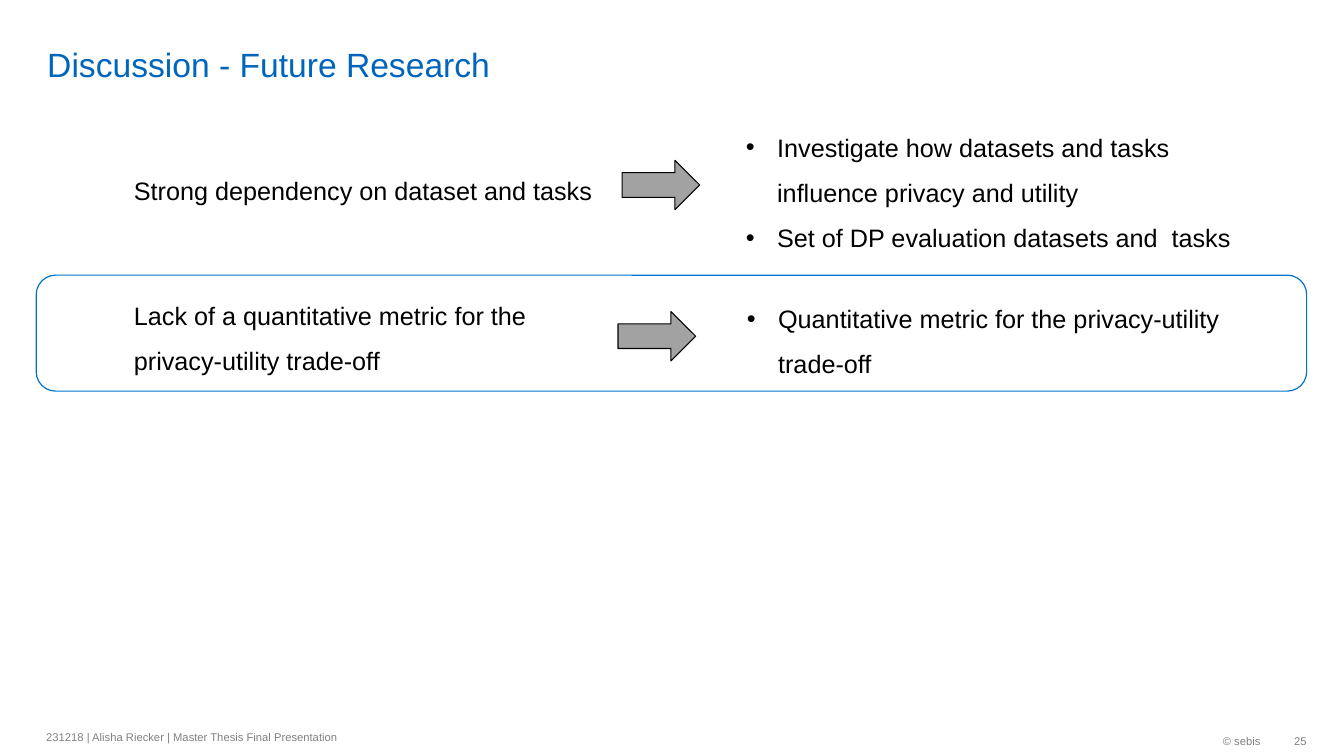
from lxml.etree import SubElement
from pptx import Presentation
from pptx.dml.color import RGBColor
from pptx.enum.shapes import MSO_SHAPE as Shape
from pptx.enum.text import MSO_ANCHOR as Anchor, PP_ALIGN as Align
from pptx.oxml.ns import qn
from pptx.util import Inches, Pt

BLACK = RGBColor(0x00, 0x00, 0x00)
WHITE = RGBColor(0xFF, 0xFF, 0xFF)
GREY = RGBColor(0x80, 0x80, 0x80)
SILVER = RGBColor(0xA2, 0xA2, 0xA2)
BLUE = RGBColor(0x00, 0x65, 0xBD)
EDGE = RGBColor(0x00, 0x73, 0xCF)


def add_bullet(para):
    props = para._p.get_or_add_pPr()
    indent = Inches(0.31)
    props.set("marL", str(indent))
    props.set("indent", str(-indent))
    SubElement(props, qn("a:buFont")).set("typeface", "Arial")
    SubElement(props, qn("a:buChar")).set("char", "•")


class Deck:
    """Holds the style and the current slide."""

    face = "Arial"

    def __init__(self):
        self.show = Presentation()
        self.show.slide_width = Inches(13.33)
        self.show.slide_height = Inches(7.5)
        self.slide = self.show.slides.add_slide(self.show.slide_layouts[6])

    def text(self, box, *lines, size=18, color=BLACK, align=Align.LEFT,
             anchor=Anchor.TOP, pad=(0.1, 0.05, 0.1, 0.05), space=1.0,
             bullet=False):
        """Add a text box; pad is left, top, right, bottom."""
        frame = self.slide.shapes.add_textbox(*map(Inches, box)).text_frame
        frame.word_wrap = True
        frame.vertical_anchor = anchor
        (frame.margin_left, frame.margin_top,
         frame.margin_right, frame.margin_bottom) = map(Inches, pad)
        for i, line in enumerate(lines):
            para = frame.add_paragraph() if i else frame.paragraphs[0]
            para.alignment = align
            para.line_spacing = space
            if bullet:
                add_bullet(para)
            run = para.add_run()
            run.text = line
            run.font.name = self.face
            run.font.size = Pt(size)
            run.font.color.rgb = color

    def shape(self, kind, box, fill, edge, width):
        item = self.slide.shapes.add_shape(kind, *map(Inches, box))
        item.shadow.inherit = False
        item.fill.solid()
        item.fill.fore_color.rgb = fill
        item.line.color.rgb = edge
        item.line.width = Pt(width)

    def arrow(self, left, top):
        self.shape(Shape.RIGHT_ARROW, (left, top, 0.77, 0.49),
                   SILVER, BLACK, 0.75)

    def footer(self, box, line, **style):
        self.text(box, line, size=8, color=GREY, anchor=Anchor.MIDDLE, **style)


def main():
    deck = Deck()
    deck.shape(Shape.ROUNDED_RECTANGLE, (0.36, 2.73, 12.6, 1.15),
               WHITE, EDGE, 0.85)
    deck.text((0.37, 0.05, 11.58, 0.79), "Discussion - Future Research",
              size=24, color=BLUE, anchor=Anchor.BOTTOM, pad=(0.1, 0, 0.1, 0))

    deck.text((1.23, 1.39, 4.8, 0.61),
              "Strong dependency on dataset and tasks", space=2.0)
    deck.arrow(6.17, 1.59)
    deck.text((7.3, 1.11, 5.36, 1.41),
              "Investigate how datasets and tasks influence privacy and utility",
              "Set of DP evaluation datasets and  tasks",
              space=1.5, bullet=True)

    deck.text((1.23, 2.78, 4.77, 0.95),
              "Lack of a quantitative metric for the privacy-utility trade-off",
              space=1.5)
    deck.arrow(6.13, 3.09)
    deck.text((7.31, 2.81, 5.03, 0.95),
              "Quantitative metric for the privacy-utility trade-off",
              space=1.5, bullet=True)

    deck.footer((0.36, 7.18, 6.38, 0.27),
                "231218 | Alisha Riecker | Master Thesis Final Presentation")
    deck.footer((10.26, 7.19, 2.34, 0.32), "© sebis", align=Align.RIGHT)
    deck.footer((12.6, 7.19, 0.36, 0.32), "25", align=Align.RIGHT,
                pad=(0.1, 0.05, 0, 0.05))
    deck.show.save("out.pptx")


if __name__ == "__main__":
    main()
